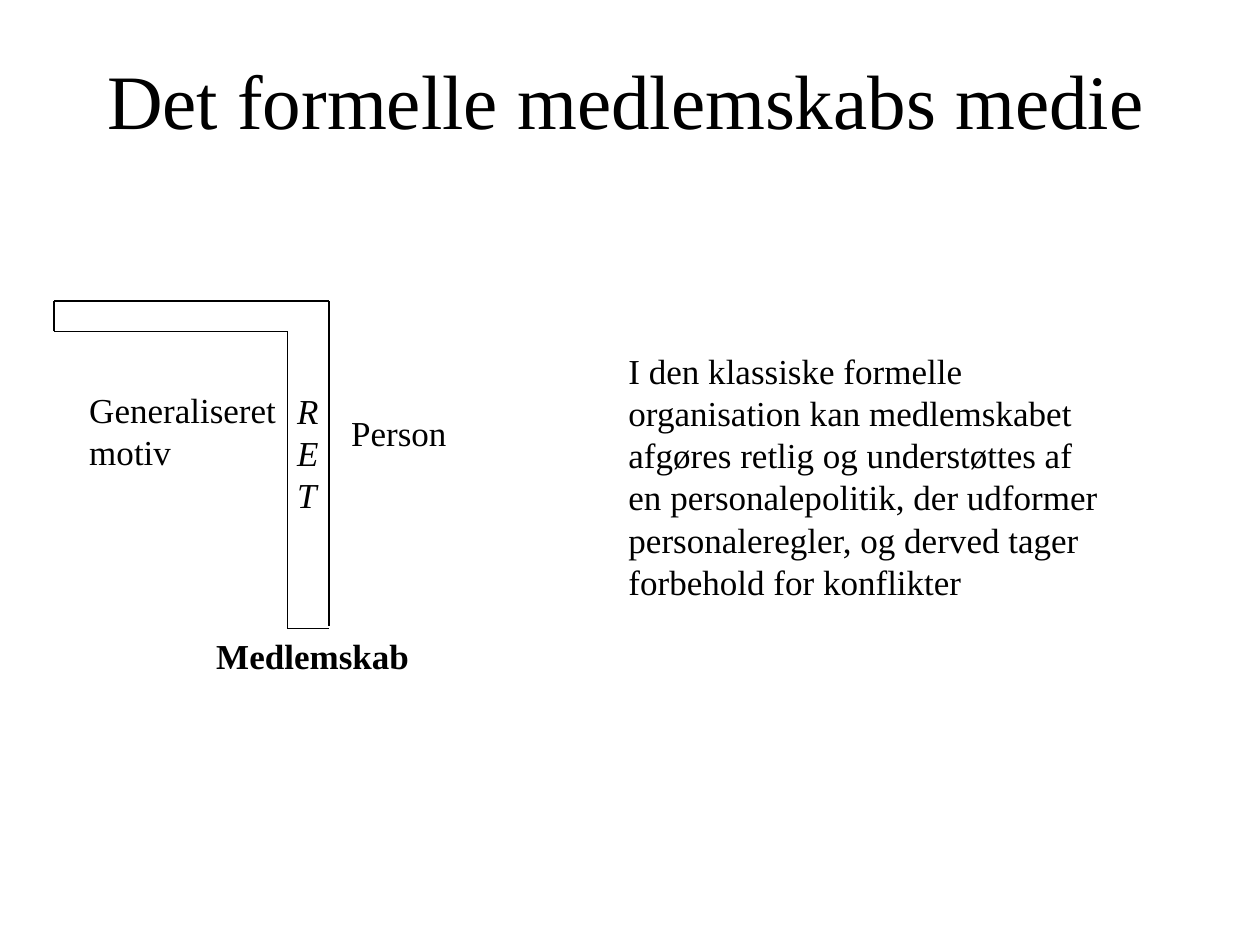
import pptx
import pptx.dml.color
import pptx.enum.shapes
import pptx.enum.text
import pptx.util
from pptx.util import Cm

ALIGN = pptx.enum.text.PP_ALIGN
ANCHOR = pptx.enum.text.MSO_ANCHOR


def tint(hue):
    """Turn a hex string into a colour."""
    return pptx.dml.color.RGBColor.from_string(hue)


def write(slide, box, lines, wrap=False, anchor=ANCHOR.TOP, align=ALIGN.LEFT, **style):
    """Place a text box with one paragraph for each line."""
    frame = slide.shapes.add_textbox(*map(Cm, box)).text_frame
    frame.word_wrap = wrap
    frame.vertical_anchor = anchor
    form = {"name": "Times New Roman", "size": pptx.util.Pt(20), **style}
    frame.text = "\n".join(lines)
    for para in frame.paragraphs:
        para.alignment = align
        font = para.runs[0].font
        font.color.rgb = tint("000000")
        for key, value in form.items():
            setattr(font, key, value)


def rule(slide, start, end):
    """Draw a thin black line between two points."""
    line = slide.shapes.add_connector(
        pptx.enum.shapes.MSO_CONNECTOR.STRAIGHT, *map(Cm, start + end))
    line.line.color.rgb = tint("000000")
    line.line.width = pptx.util.Pt(0.75)
    props = line._element.spPr
    props.append(pptx.oxml.parse_xml(
        '<a:effectLst xmlns:a="http://schemas.openxmlformats.org/drawingml/2006/main"/>'))


def title(slide, box):
    """Write the centred heading."""
    write(slide, box, ["Det formelle medlemskabs medie"], wrap=True,
          anchor=ANCHOR.MIDDLE, align=ALIGN.CENTER, size=pptx.util.Pt(44))


def form(slide, box):
    """Draw the angled bar and its labels inside the box."""
    left, top, width, height = box
    inner, arm = width - 0.84, 0.61
    edges = [
        ((0, 0), (width, 0)),
        ((width, 0), (width, height - 0.05)),
        ((0, arm), (inner, arm)),
        ((0, arm), (0, 0)),
        ((inner, arm), (inner, height)),
        ((width, height), (inner, height)),
    ]
    for ends in edges:
        rule(slide, *((left + x, top + y) for x, y in ends))
    labels = [
        ((5.74, 2.11, 2.46, 1.12), ["Person"], {}),
        ((0.46, 1.63, 4.47, 1.96), ["Generaliseret", "motiv"], {}),
        ((3.02, height, 4.42, 1.12), ["Medlemskab"], {"bold": True}),
        ((4.65, 1.65, 0.94, 2.82), "RET", {"italic": True}),
    ]
    for (x, y, wide, high), lines, style in labels:
        write(slide, (left + x, top + y, wide, high), lines, **style)


def note(slide, box):
    """Write the explanation beside the form."""
    write(slide, box, [
        "I den klassiske formelle organisation kan medlemskabet afgøres retlig "
        "og understøttes af en personalepolitik, der udformer personaleregler, "
        "og derved tager forbehold for konflikter"], wrap=True)


def main():
    """Build and save the slide."""
    deck = pptx.Presentation()
    deck.slide_width, deck.slide_height = Cm(25.4), Cm(19.05)
    slide = deck.slides.add_slide(deck.slide_layouts[6])
    title(slide, (1.19, 0.41, 22.86, 3.18))
    form(slide, (1.09, 6.07, 5.54, 6.6))
    note(slide, (12.42, 6.93, 10.21, 5.38))
    deck.save("out.pptx")


if __name__ == "__main__":
    main()
